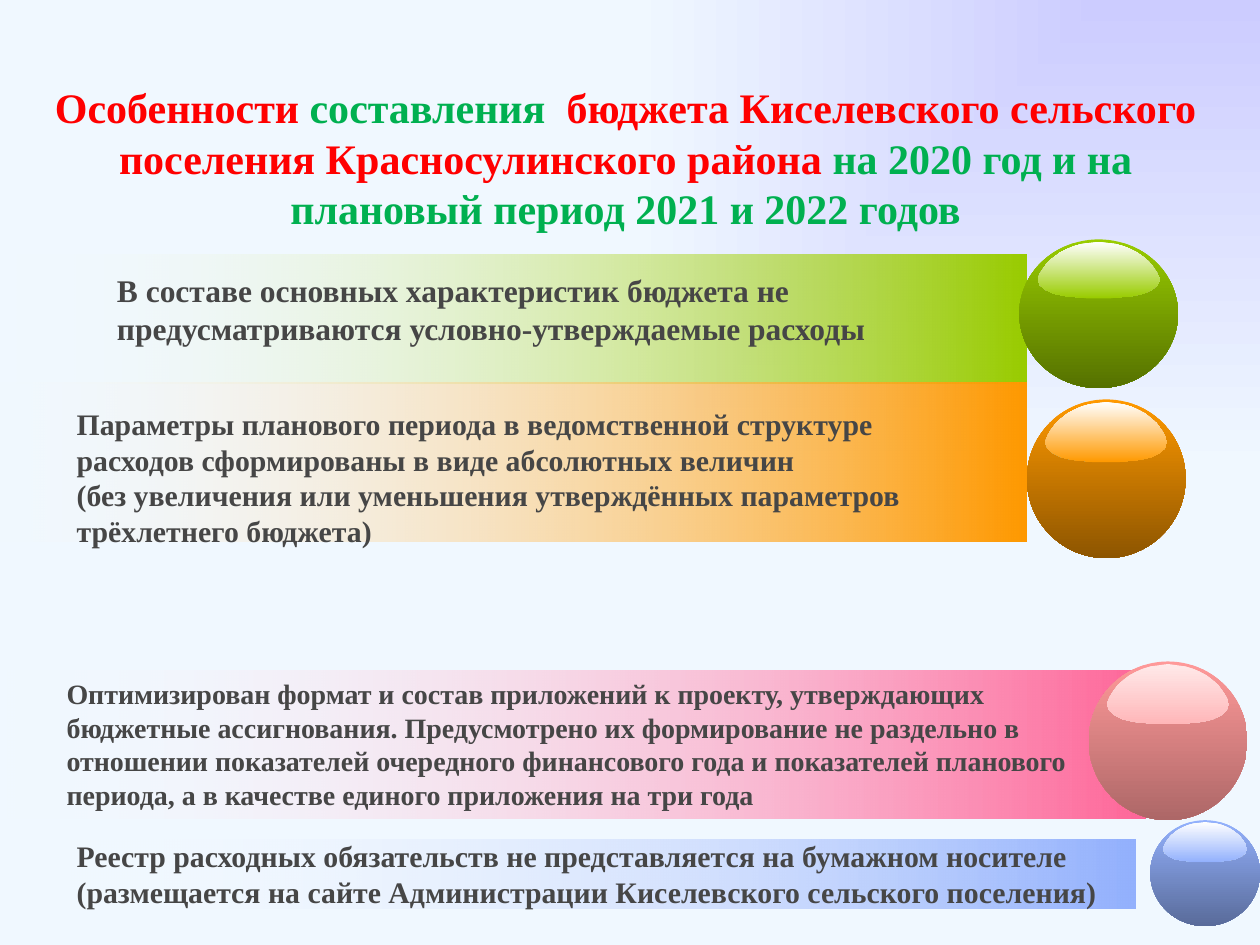
from dataclasses import dataclass

from lxml.etree import SubElement
from pptx import Presentation
from pptx.dml.color import RGBColor
from pptx.enum.shapes import MSO_SHAPE as Shape
from pptx.enum.text import MSO_ANCHOR as Anchor, MSO_AUTO_SIZE as AutoSize, PP_ALIGN as Align
from pptx.oxml.ns import qn
from pptx.util import Inches, Pt


@dataclass(frozen=True)
class Theme:
    font: str = "Times New Roman"
    text: str = "464646"
    red: str = "FF0000"
    dark_green: str = "00B050"
    white: str = "FFFFFF"
    lavender: str = "CCCCFF"
    pale: str = "F0F8FF"
    green: str = "99CC00"
    orange: str = "FF9900"
    pink: str = "FF6699"
    rose: str = "FF9999"
    blue: str = "93B1FD"
    rose_gloss: tuple = ("FFE9E9", "FFB7B9")
    title_size: int = 24
    large: int = 18
    medium: int = 17
    small: int = 16


THEME = Theme()

# Right half of the gloss outline, from top to bottom: shares of half width and of height
GLOSS_HALF = [
    (0.14, 0.02), (0.28, 0.04), (0.41, 0.08), (0.52, 0.13), (0.63, 0.19),
    (0.73, 0.27), (0.82, 0.35), (0.9, 0.46), (0.96, 0.56), (1, 0.67),
    (0.96, 0.77), (0.87, 0.85), (0.73, 0.92), (0.55, 0.96), (0.35, 0.98), (0.2, 1),
]


def write_text(tf, paragraphs, size, color=THEME.text, align=Align.LEFT,
               anchor=Anchor.TOP, wrap=True):
    """Fill a frame; a paragraph is a string or a list of (text, colour) runs."""
    tf.word_wrap = wrap
    tf.auto_size = AutoSize.NONE
    tf.vertical_anchor = anchor
    for i, runs in enumerate(paragraphs):
        p = tf.paragraphs[0] if i == 0 else tf.add_paragraph()
        p.alignment = align
        for text, run_color in [(runs, color)] if isinstance(runs, str) else runs:
            for n, line in enumerate(text.split("\n")):
                if n:
                    p.add_line_break()
                r = p.add_run()
                r.text = line
                r.font.name = THEME.font
                r.font.size = Pt(size)
                r.font.bold = True
                r.font.color.rgb = RGBColor.from_string(run_color)


def paint(sp, first, last, angle=0, effects=("", "")):
    """Two-stop gradient without outline; effects are (name, percent) per stop."""
    sp.shadow.inherit = False
    sp.line.fill.background()
    sp.fill.gradient()
    sp.fill.gradient_angle = angle
    for stop, color in zip(sp.fill.gradient_stops, (first, last)):
        stop.color.rgb = RGBColor.from_string(color)
    for clr, effect in zip(sp._element.spPr.iter(qn("a:srgbClr")), effects):
        if effect:
            name, percent = effect
            SubElement(clr, qn(f"a:{name}"), val=str(percent * 1000))


class SlideBuilder:
    def __init__(self, prs, theme):
        self.theme = theme
        self.slide = prs.slides.add_slide(prs.slide_layouts[5])
        self.shapes = self.slide.shapes

    def background(self):
        """Gradient that spreads from the top right corner."""
        fill = self.slide.background.fill
        fill.gradient()
        for stop, color in zip(fill.gradient_stops, (self.theme.lavender, self.theme.pale)):
            stop.color.rgb = RGBColor.from_string(color)
        grad = next(self.slide._element.iter(qn("a:gradFill")))
        grad.remove(grad.find(qn("a:lin")))
        spread = SubElement(grad, qn("a:path"), {"path": "rect"})
        SubElement(spread, qn("a:fillToRect"), l="100000", b="100000")

    def title(self, runs, x, y, w, h):
        sp = self.shapes.title
        sp.left, sp.top, sp.width, sp.height = map(Inches, (x, y, w, h))
        write_text(sp.text_frame, [runs], self.theme.title_size, align=Align.CENTER)

    def bar(self, color, x, y, w, h):
        sp = self.shapes.add_shape(Shape.RECTANGLE, *map(Inches, (x, y, w, h)))
        paint(sp, self.theme.white, color, effects=(("alpha", 0), ""))
        return sp

    def text(self, paragraphs, size, x, y, w, h):
        sp = self.shapes.add_textbox(*map(Inches, (x, y, w, h)))
        write_text(sp.text_frame, paragraphs, size)

    def ball(self, color, shade, x, y, w, h, gloss=None):
        """Sphere that darkens downwards, with a highlight near its top."""
        group = self.shapes.add_group_shape().shapes
        sphere = group.add_shape(Shape.OVAL, *map(Inches, (x, y, w, h)))
        paint(sphere, color, color, 270, ("", ("shade", shade)))

        center, half = x + w / 2, 0.385 * w
        top, height = y + 0.016 * h, 0.38 * h
        left_side = [(-px, py) for px, py in reversed(GLOSS_HALF)]
        points = [(Inches(center + px * half), Inches(top + py * height))
                  for px, py in GLOSS_HALF + left_side]
        outline = group.build_freeform(Inches(center), Inches(top))
        outline.add_line_segments(points, close=True)
        paint(outline.convert_to_shape(), *(gloss or (self.theme.white, color)), 270)


def main():
    prs = Presentation()
    prs.slide_width, prs.slide_height = Inches(10), Inches(7.5)
    t = THEME
    s = SlideBuilder(prs, t)
    s.background()
    s.title([
        ("Особенности", t.red),
        (" составления  ", t.dark_green),
        ("бюджета Киселевского сельского поселения Красносулинского района ", t.red),
        ("на 2020 год и на плановый период 2021 и 2022 годов", t.dark_green),
    ], 0.28, 0.6, 9.37, 1.31)

    s.bar(t.green, 0.08, 2.02, 8.07, 1.02)
    s.ball(t.green, 26, 8.09, 1.9, 1.26, 1.18)
    s.text(["В составе основных характеристик бюджета не предусматриваются "
            "условно-утверждаемые расходы"], t.large, 0.83, 2.1, 7.09, 0.71)

    s.bar(t.orange, -0.28, 3.04, 8.43, 1.26)
    s.ball(t.orange, 26, 8.15, 3.17, 1.26, 1.26)
    s.text(["Параметры планового периода в ведомственной структуре",
            "расходов сформированы в виде абсолютных величин \n"
            "(без увеличения или уменьшения утверждённых параметров "
            "трёхлетнего бюджета)"], t.medium, 0.51, 3.17, 7.72, 1.51)

    s.bar(t.pink, 0, 5.32, 9.09, 1.18)
    s.ball(t.rose, 41, 8.64, 5.25, 1.26, 1.26, gloss=t.rose_gloss)
    s.text(["Оптимизирован формат и состав приложений к проекту, утверждающих "
            "бюджетные ассигнования. Предусмотрено их формирование не раздельно в "
            "отношении показателей очередного финансового года и показателей "
            "планового периода, а в качестве единого приложения на три года"],
           t.small, 0.43, 5.32, 8.19, 1.18)

    registry = s.bar(t.blue, 0.51, 6.66, 8.5, 0.55)
    write_text(registry.text_frame, [
        "Реестр расходных обязательств не представляется на бумажном носителе",
        "(размещается на сайте Администрации Киселевского сельского поселения)",
    ], t.medium, anchor=Anchor.MIDDLE, wrap=False)
    s.ball(t.blue, 32, 9.13, 6.51, 0.87, 0.84)
    prs.save("out.pptx")


if __name__ == "__main__":
    main()
